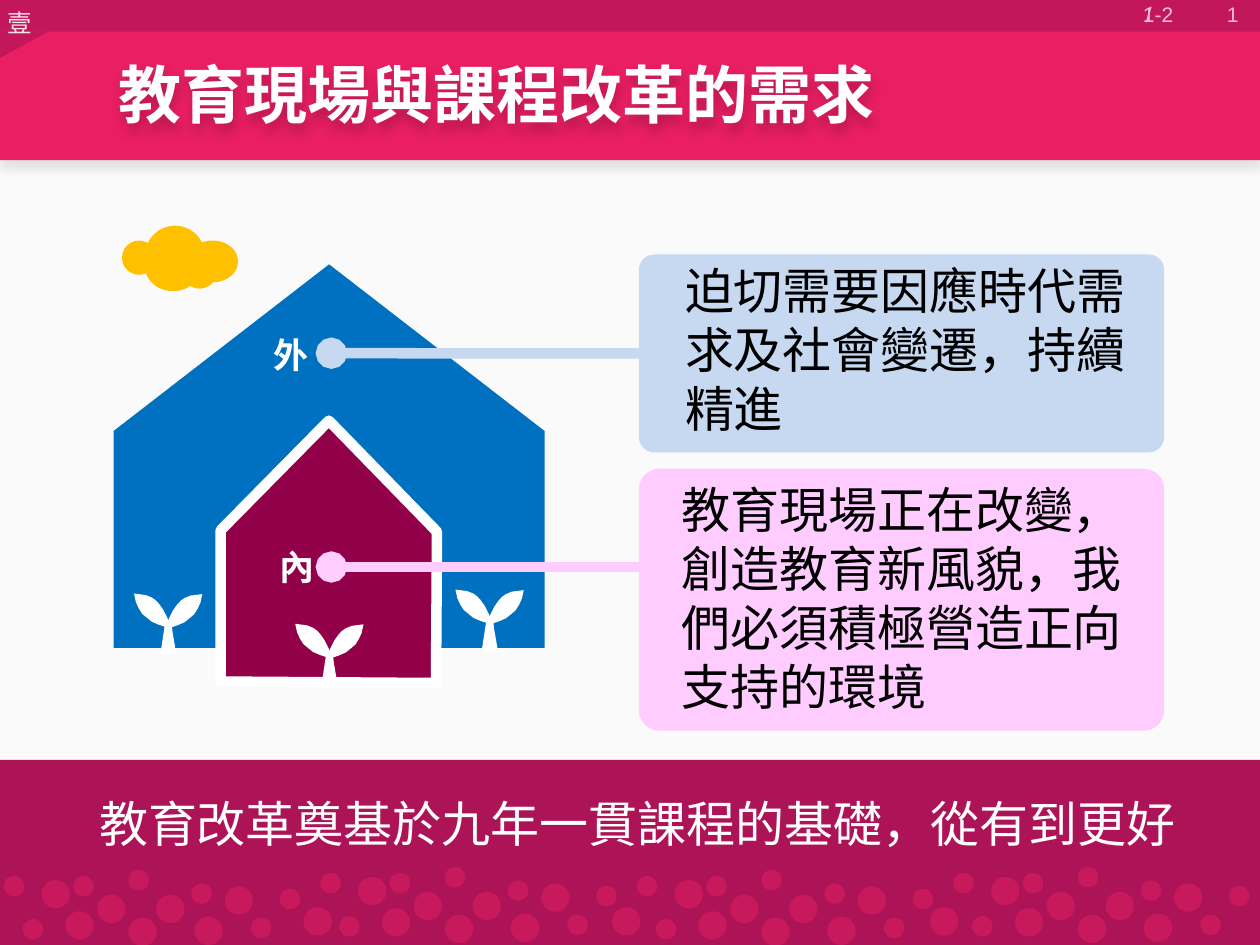
from lxml.etree import SubElement
from pptx import Presentation
from pptx.dml.color import RGBColor
from pptx.enum.shapes import MSO_CONNECTOR, MSO_SHAPE
from pptx.enum.text import MSO_ANCHOR, MSO_AUTO_SIZE, PP_ALIGN
from pptx.oxml.ns import qn
from pptx.util import Cm, Pt

COLORS = {
    "paper": "FAFAFA", "header": "E91E63", "strip": "C2185B", "footer": "AD1457",
    "dot": "C8195D", "house": "0070C0", "door": "920049", "cloud": "FFC000",
    "outer": "C6D9F1", "inner": "FFCCFF", "white": "FFFFFF", "black": "000000",
    "chapter": "FCE4EC", "number": "F8BBD0", "section": "F9BFD2",
}
CHINESE = "Noto Sans CJK SC"

presentation = Presentation()
presentation.slide_width, presentation.slide_height = Cm(25.4), Cm(19.05)
slide = presentation.slides.add_slide(presentation.slide_layouts[5])
shapes = slide.shapes


def paint(shape, color):
    shape.shadow.inherit = False
    shape.fill.solid()
    shape.fill.fore_color.rgb = RGBColor.from_string(COLORS[color])
    shape.line.fill.background()
    return shape


def write(text, box, shape=None, size=28, color="black", font=CHINESE, bold=False,
          align=PP_ALIGN.LEFT, anchor=MSO_ANCHOR.TOP, wrap=True):
    shape = shape or shapes.add_textbox(0, 0, 0, 0)
    shape.left, shape.top, shape.width, shape.height = map(Cm, box)
    frame = shape.text_frame
    frame.word_wrap = wrap
    frame.auto_size = MSO_AUTO_SIZE.NONE
    frame.vertical_anchor = anchor
    paragraph = frame.paragraphs[0]
    paragraph.alignment = align
    run = paragraph.add_run()
    run.text = text
    run.font.size, run.font.bold, run.font.name = Pt(size), bold, font
    run.font.color.rgb = RGBColor.from_string(COLORS[color])
    SubElement(run.font._element, qn("a:ea"), typeface=font)
    return shape


bands = {}
for color, top, height in [("paper", 1.12, 17.93), ("header", 0, 3.23),
                           ("strip", 0, 0.64), ("footer", 15.32, 3.73)]:
    band = shapes.add_shape(MSO_SHAPE.RECTANGLE, 0, Cm(top), Cm(25.4), Cm(height))
    bands[color] = paint(band, color)

corner = shapes.build_freeform(0, 64, scale=Cm(0.01))
corner.add_line_segments([(0, 117), (97, 64)])
paint(corner.convert_to_shape(), "strip")
write("壹", (-0.1, 0.03, 1.02, 0.86), size=14, color="chapter", wrap=False)

for kind, top, height in [(MSO_SHAPE.ISOSCELES_TRIANGLE, 5.33, 3.36),
                          (MSO_SHAPE.RECTANGLE, 8.69, 4.37)]:
    paint(shapes.add_shape(kind, Cm(2.29), Cm(top), Cm(8.69), Cm(height)), "house")

door_outline = shapes.build_freeform(445, 1374, scale=Cm(0.01))
door_outline.add_line_segments([(445, 1069), (663, 848), (881, 1072), (879, 1377)])
door = paint(door_outline.convert_to_shape(), "door")
door.line.color.rgb = RGBColor.from_string(COLORS["white"])
door.line.width = Pt(6)

write("教育改革奠基於九年一貫課程的基礎，從有到更好", (1.75, 15.88, 23.04, 1.45), color="white")

leaf = [(48, 7), (45, 1), (34, -6), (19, -14), (5, -19), (-5, -21), (-14, -21),
        (-27, -18), (-48, -7), (-35, 5), (-23, 12), (-11, 17), (1, 18), (14, 19),
        (29, 16), (42, 12)]
mirrored_leaf = [(-x, y) for x, y in leaf]
stem = [(-6, 0), (7, 0), (9, 20), (17, 66), (-16, 66), (-9, 20)]
for plant_x, plant_y in [(6.64, 13.16), (9.87, 12.47), (3.39, 12.55)]:
    for points, shift_x, shift_y, rotation in [(leaf, -0.33, -0.25, 34.9), (stem, 0, 0, 0),
                                               (mirrored_leaf, 0.33, -0.24, 325.1)]:
        outline = shapes.build_freeform(*points[0], scale=Cm(0.01))
        outline.add_line_segments(points[1:])
        part = outline.convert_to_shape(Cm(plant_x + shift_x), Cm(plant_y + shift_y))
        paint(part, "white").rotation = rotation

large_dots = [(1.24, 18.31), (1.88, 17.98), (2.51, 18.44), (3.07, 17.98),
              (3.84, 18.42), (4.45, 17.81), (0.76, 17.68)]
small_dots = [(3.78, 17.75), (0.38, 18.47), (1.4, 17.6), (0, 17.6),
              (2.51, 17.48), (4.98, 18.44), (5.56, 17.86)]
dots = [(6.12, 18.29, 0.57), (12.34, 18.29, 0.57), (18.75, 18.29, 0.57)]
for tile in range(4):
    shift_x, shift_y = 0.08 + 6.38 * tile, 0.06 * (1 - tile % 2)
    for positions, size in [(large_dots, 0.57), (small_dots, 0.41)]:
        dots += [(x + shift_x, y + shift_y, size) for x, y in positions]
for x, y, size in dots:
    dot = shapes.add_shape(MSO_SHAPE.FLOWCHART_CONNECTOR, Cm(x), Cm(y), Cm(size), Cm(size))
    paint(dot, "dot")

for puff in [(2.46, 4.85, 0.69, 0.69), (2.92, 4.55, 1.22, 1.24), (3.78, 4.85, 1.02, 0.84),
             (2.92, 4.85, 1.14, 1.02), (3.68, 5.13, 0.69, 0.69)]:
    paint(shapes.add_shape(MSO_SHAPE.OVAL, *map(Cm, puff)), "cloud")

write("1", (19.3, -0.23, 5.92, 1.02), size=12, color="number", font="Arial",
      align=PP_ALIGN.RIGHT, anchor=MSO_ANCHOR.MIDDLE)
section = write("1-2\t/", (21.62, -0.1, 2.9, 0.76), size=12, color="section", font="Arial")
section_properties = section.text_frame.paragraphs[0]._p.get_or_add_pPr()
section_properties.set("marL", str(Cm(1.17)))
section_properties.set("indent", "0")
tab_list = SubElement(section_properties, qn("a:tabLst"))
SubElement(tab_list, qn("a:tab"), pos=str(Cm(2.13)), algn="l")

callouts = [
    ("inner", "內", (5.38, 10.87, 1.22, 1.12), 11.43, (12.88, 9.45, 10.59, 5.28),
     "教育現場正在改變，創造教育新風貌，我們必須積極營造正向支持的環境",
     (13.49, 9.55, 10.19, 5.05)),
    ("outer", "外", (5.26, 6.6, 1.22, 1.12), 7.12, (12.88, 5.13, 10.59, 3.99),
     "迫切需要因應時代需求及社會變遷，持續精進", (13.56, 5.13, 10.34, 3.84)),
]
for color, label, label_box, line_y, panel_box, text, text_box in callouts:
    panel = paint(shapes.add_shape(MSO_SHAPE.ROUNDED_RECTANGLE, *map(Cm, panel_box)), color)
    panel.adjustments[0] = 0.078
    write(text, text_box)
    connector = shapes.add_connector(MSO_CONNECTOR.STRAIGHT, Cm(6.68), Cm(line_y),
                                     Cm(12.88), Cm(line_y))
    if color == "outer":
        connector.end_connect(panel, 1)
    connector.line.color.rgb = RGBColor.from_string(COLORS[color])
    connector.line.width = Pt(6)
    connector_properties = connector._element.spPr
    SubElement(connector_properties.find(qn("a:ln")), qn("a:headEnd"), type="oval")
    SubElement(connector_properties, qn("a:effectLst"))
    write(label, label_box, size=20, color="white", bold=True, wrap=False)

title = write("教育現場與課程改革的需求", (2.13, 0.53, 23.27, 2.69), shape=shapes.title,
              size=36, color="white", bold=True, anchor=MSO_ANCHOR.MIDDLE)
shapes._spTree.append(title._element)

for shape, opacity in [(bands["header"], 10000), (title, 20000)]:
    shape.shadow.inherit = False
    effects = shape._element.spPr.find(qn("a:effectLst"))
    shadow = SubElement(effects, qn("a:outerShdw"), blurRad=str(Pt(6)), dist=str(Pt(4)),
                        dir="5400000", algn="t", rotWithShape="0")
    shadow_color = SubElement(shadow, qn("a:srgbClr"), val=COLORS["black"])
    SubElement(shadow_color, qn("a:alpha"), val=str(opacity))

presentation.save("out.pptx")
